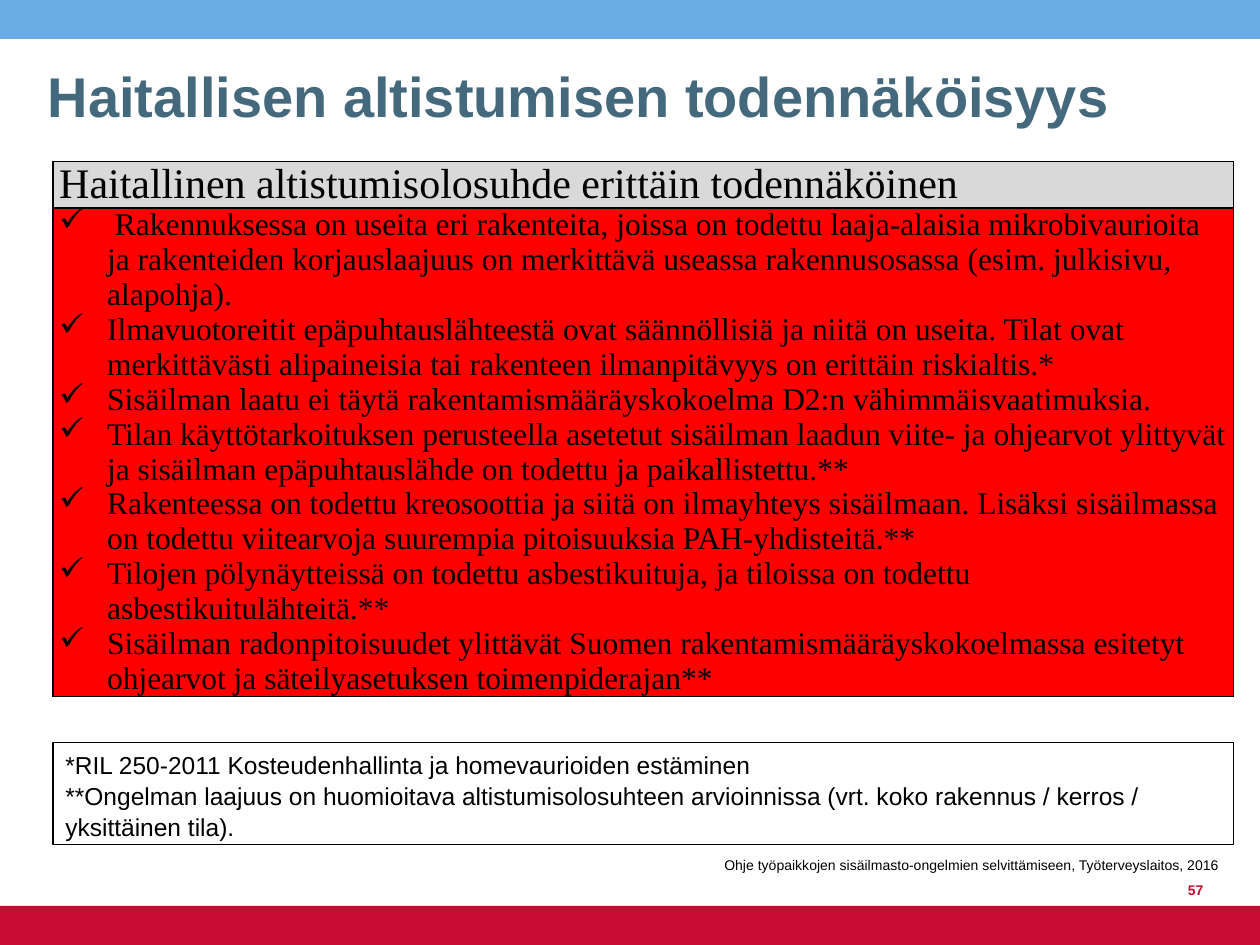
import pptx
import pptx.dml.color
import pptx.enum.shapes
import pptx.enum.text
import pptx.oxml.ns
import pptx.util
from lxml import etree

Inches = pptx.util.Inches
Pt = pptx.util.Pt
Anchor = pptx.enum.text.MSO_ANCHOR
Align = pptx.enum.text.PP_ALIGN

SLIDE_WIDTH, SLIDE_HEIGHT = 10, 7.5
BAND_HEIGHT = 0.31
LEFT, WIDTH = 0.42, 9.37
BLUE, RED, SLATE, BLACK = "6AADE4", "C60C30", "44697D", "000000"

CRITERIA = [
    " Rakennuksessa on useita eri rakenteita, joissa on todettu laaja-alaisia mikrobivaurioita ja rakenteiden korjauslaajuus on merkittävä useassa rakennusosassa (esim. julkisivu, alapohja).",
    "Ilmavuotoreitit epäpuhtauslähteestä ovat säännöllisiä ja niitä on useita. Tilat ovat merkittävästi alipaineisia tai rakenteen ilmanpitävyys on erittäin riskialtis.*",
    "Sisäilman laatu ei täytä rakentamismääräyskokoelma D2:n vähimmäisvaatimuksia.",
    "Tilan käyttötarkoituksen perusteella asetetut sisäilman laadun viite- ja ohjearvot ylittyvät ja sisäilman epäpuhtauslähde on todettu ja paikallistettu.**",
    "Rakenteessa on todettu kreosoottia ja siitä on ilmayhteys sisäilmaan. Lisäksi sisäilmassa on todettu viitearvoja suurempia pitoisuuksia PAH-yhdisteitä.**",
    "Tilojen pölynäytteissä on todettu asbestikuituja, ja tiloissa on todettu asbestikuitulähteitä.**",
    "Sisäilman radonpitoisuudet ylittävät Suomen rakentamismääräyskokoelmassa esitetyt ohjearvot ja säteilyasetuksen toimenpiderajan**",
]
FOOTNOTES = [
    "*RIL 250-2011 Kosteudenhallinta ja homevaurioiden estäminen",
    "**Ongelman laajuus on huomioitava altistumisolosuhteen arvioinnissa (vrt. koko rakennus / kerros / yksittäinen tila).",
]


def color(hex_value):
    return pptx.dml.color.RGBColor.from_string(hex_value)


def add_xml(parent, tag, **attributes):
    return etree.SubElement(parent, pptx.oxml.ns.qn(tag), attributes)


class SlideBuilder:
    """Holds the fonts and the current slide, and adds elements to it."""

    heading_font = "Arial"
    table_font = "Times New Roman"

    def __init__(self, slide):
        self.slide = slide

    def add_lines(self, frame, lines, font, size, ink=BLACK, bold=False,
                  align=Align.LEFT, bullet=None, spacing=None):
        for index, line in enumerate(lines):
            paragraph = frame.add_paragraph() if index else frame.paragraphs[0]
            paragraph.alignment = align
            if spacing:
                paragraph.line_spacing = spacing
            if bullet:
                properties = paragraph._p.get_or_add_pPr()
                indent = Inches(0.38)
                properties.set("marL", str(indent))
                properties.set("indent", str(-indent))
                add_xml(properties, "a:buChar", char=bullet)
            run = paragraph.add_run()
            run.text = line
            run.font.name = font
            run.font.size = Pt(size)
            run.font.bold = bold
            run.font.color.rgb = color(ink)

    def rectangle(self, left, top, width, height, fill=None, line=None):
        shape = self.slide.shapes.add_shape(
            pptx.enum.shapes.MSO_SHAPE.RECTANGLE,
            Inches(left), Inches(top), Inches(width), Inches(height))
        shape.shadow.inherit = False
        if fill:
            shape.fill.solid()
            shape.fill.fore_color.rgb = color(fill)
        else:
            shape.fill.background()
        if line:
            shape.line.color.rgb = color(line)
            shape.line.width = Pt(0.75)
        else:
            shape.line.fill.background()
        return shape

    def text(self, left, top, width, height, line, size, anchor, **style):
        box = self.slide.shapes.add_textbox(
            Inches(left), Inches(top), Inches(width), Inches(height))
        frame = box.text_frame
        frame.word_wrap = True
        frame.vertical_anchor = anchor
        self.add_lines(frame, [line], self.heading_font, size, **style)

    def note_box(self, left, top, width, height, lines):
        shape = self.rectangle(left, top, width, height, line=BLACK)
        frame = shape.text_frame
        frame.word_wrap = True
        frame.vertical_anchor = Anchor.TOP
        self.add_lines(frame, lines, self.heading_font, 14, spacing=1.05)

    def border(self, cell):
        properties = cell._tc.get_or_add_tcPr()
        for position, side in enumerate(("a:lnL", "a:lnR", "a:lnT", "a:lnB")):
            edge = add_xml(properties, side, w=str(Pt(1)))
            add_xml(add_xml(edge, "a:solidFill"), "a:srgbClr", val=BLACK)
            properties.insert(position, edge)

    def table(self, left, top, width, rows):
        total = sum(row["height"] for row in rows)
        table = self.slide.shapes.add_table(
            len(rows), 1, Inches(left), Inches(top),
            Inches(width), Inches(total)).table
        for index, row in enumerate(rows):
            table.rows[index].height = Inches(row["height"])
            cell = table.cell(index, 0)
            cell.margin_left = cell.margin_right = Inches(0.05)
            cell.margin_top = cell.margin_bottom = 0
            cell.fill.solid()
            cell.fill.fore_color.rgb = color(row["fill"])
            self.border(cell)
            self.add_lines(cell.text_frame, row["lines"], self.table_font,
                           row["size"], bullet=row.get("bullet"))


def main():
    presentation = pptx.Presentation()
    presentation.slide_width = Inches(SLIDE_WIDTH)
    presentation.slide_height = Inches(SLIDE_HEIGHT)
    builder = SlideBuilder(
        presentation.slides.add_slide(presentation.slide_layouts[6]))

    builder.rectangle(0, 0, SLIDE_WIDTH, BAND_HEIGHT, fill=BLUE)
    builder.rectangle(0, SLIDE_HEIGHT - BAND_HEIGHT, SLIDE_WIDTH, BAND_HEIGHT,
                      fill=RED)
    builder.table(LEFT, 1.28, WIDTH, [
        {"height": 0.37, "fill": "D9D9D9", "size": 24,
         "lines": ["Haitallinen altistumisolosuhde erittäin todennäköinen"]},
        {"height": 3.88, "fill": "FF0000", "size": 18,
         "lines": CRITERIA, "bullet": "✓"},
    ])
    builder.text(0.28, 0.13, 9.53, 1.25,
                 "Haitallisen altistumisen todennäköisyys", 32, Anchor.MIDDLE,
                 ink=SLATE, bold=True)
    builder.text(9.1, 6.78, 0.55, 0.4, "57", 8, Anchor.BOTTOM,
                 ink=RED, bold=True, align=Align.RIGHT)
    builder.text(5.65, 6.75, 4.17, 0.23,
                 "Ohje työpaikkojen sisäilmasto-ongelmien selvittämiseen, Työterveyslaitos, 2016",
                 8, Anchor.TOP)
    builder.note_box(LEFT, 5.89, WIDTH, 0.81, FOOTNOTES)

    presentation.save("out.pptx")


if __name__ == "__main__":
    main()
